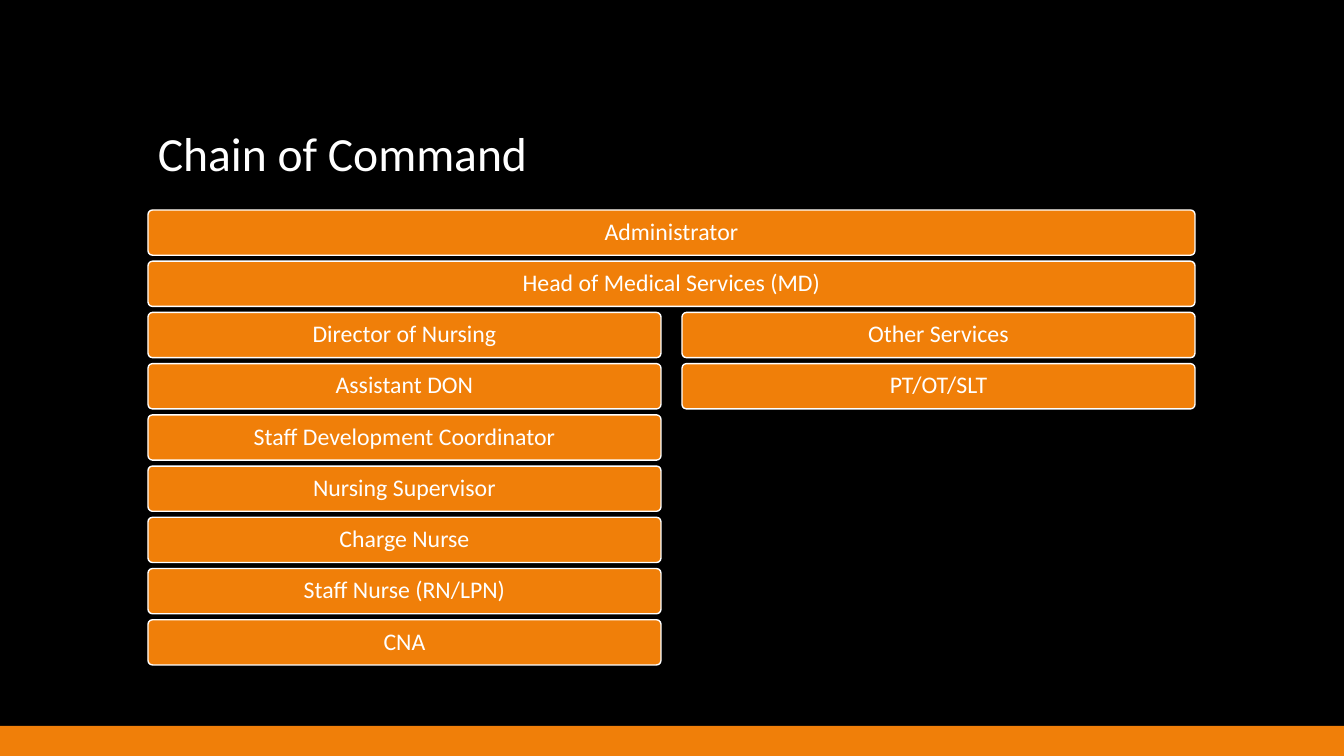
import pptx
import pptx.util
import pptx.dml.color
import pptx.enum.shapes
import pptx.enum.text

TITLE = "Chain of Command"
# Each rank: name, first column, columns spanned, row
RANKS = [
    ("Administrator", 0, 2, 0),
    ("Head of Medical Services (MD)", 0, 2, 1),
    ("Director of Nursing", 0, 1, 2),
    ("Assistant DON", 0, 1, 3),
    ("Staff Development Coordinator", 0, 1, 4),
    ("Nursing Supervisor", 0, 1, 5),
    ("Charge Nurse", 0, 1, 6),
    ("Staff Nurse (RN/LPN)", 0, 1, 7),
    ("CNA", 0, 1, 8),
    ("Other Services", 1, 1, 2),
    ("PT/OT/SLT", 1, 1, 3),
]
THEME = {
    "back": "000000", "fill": "F07F09", "text": "FFFFFF",
    "font": "Calibri", "title": 34, "body": 17,
}

# Lengths in px
WIDE, HIGH = 1344, 756
LEFT, TOP, SPAN, DEPTH = 148, 210, 1047, 455
COLS, ROWS = 2, 9
GAP_X, GAP_Y = 21, 6
BOX_W = (SPAN - GAP_X * (COLS - 1)) / COLS
BOX_H = (DEPTH - GAP_Y * (ROWS - 1)) / ROWS
FOOT = 30
INSET = 7

SHAPE = pptx.enum.shapes.MSO_SHAPE
ALIGN = pptx.enum.text.PP_ALIGN
ANCHOR = pptx.enum.text.MSO_ANCHOR


def px(n):
    return round(n * 9144000 / 1008)


def color(name):
    return pptx.dml.color.RGBColor.from_string(THEME[name])


def write(shape, text, size, align, anchor):
    frame = shape.text_frame
    frame.word_wrap = True
    frame.vertical_anchor = anchor
    para = frame.paragraphs[0]
    para.text = text
    para.alignment = align
    para.line_spacing = 0.9
    para.font.name = THEME["font"]
    para.font.size = pptx.util.Pt(THEME[size])
    para.font.color.rgb = color("text")
    return frame


def block(slide, kind, x, y, w, h):
    shape = slide.shapes.add_shape(kind, px(x), px(y), px(w), px(h))
    shape.shadow.inherit = False
    shape.fill.solid()
    shape.fill.fore_color.rgb = color("fill")
    return shape


def rank(slide, name, col, span, row):
    x = LEFT + col * (BOX_W + GAP_X)
    y = TOP + row * (BOX_H + GAP_Y)
    w = span * BOX_W + (span - 1) * GAP_X
    box = block(slide, SHAPE.ROUNDED_RECTANGLE, x, y, w, BOX_H)
    box.adjustments[0] = 0.1
    box.line.color.rgb = color("text")
    box.line.width = pptx.util.Pt(1)
    frame = write(box, name, "body", ALIGN.CENTER, ANCHOR.MIDDLE)
    frame.margin_left = frame.margin_right = px(INSET)
    frame.margin_top = frame.margin_bottom = px(INSET)


def main():
    deck = pptx.Presentation()
    deck.slide_width, deck.slide_height = px(WIDE), px(HIGH)
    slide = deck.slides.add_slide(deck.slide_layouts[6])
    slide.background.fill.solid()
    slide.background.fill.fore_color.rgb = color("back")

    foot = block(slide, SHAPE.RECTANGLE, 0, HIGH - FOOT, WIDE, FOOT)
    foot.line.fill.background()
    title = slide.shapes.add_textbox(px(LEFT), px(51), px(SPAN), px(136))
    write(title, TITLE, "title", ALIGN.LEFT, ANCHOR.BOTTOM)
    for item in RANKS:
        rank(slide, *item)

    deck.save("out.pptx")


if __name__ == "__main__":
    main()
